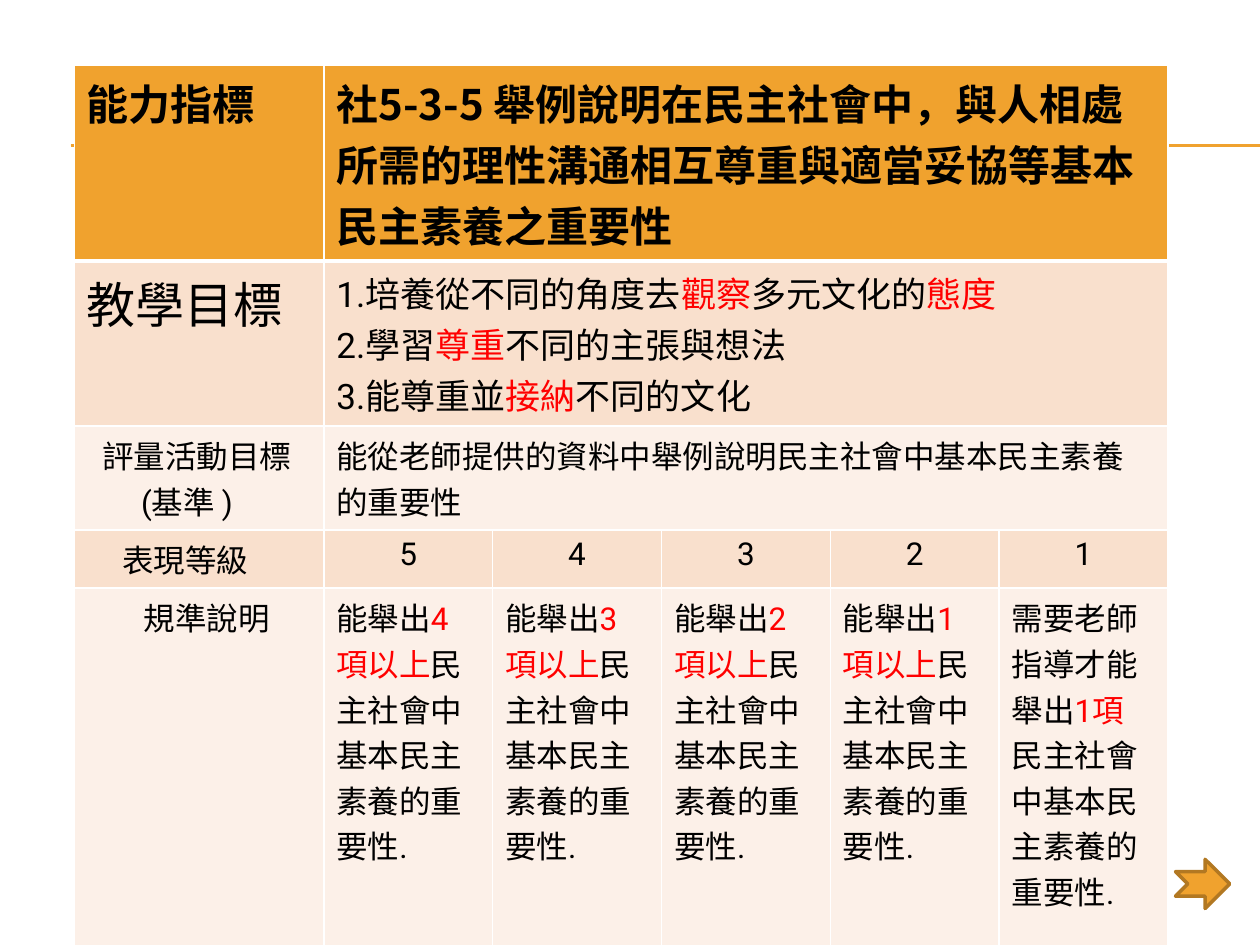
from lxml import etree
from pptx import Presentation
from pptx.dml.color import RGBColor
from pptx.enum.shapes import MSO_CONNECTOR, MSO_SHAPE
from pptx.enum.text import PP_ALIGN
from pptx.oxml.ns import qn
from pptx.util import Inches, Pt

STRAIGHT = MSO_CONNECTOR.STRAIGHT
NOTCHED_ARROW = MSO_SHAPE.NOTCHED_RIGHT_ARROW
LEFT, CENTER = PP_ALIGN.LEFT, PP_ALIGN.CENTER

ORANGE, DARK_ORANGE = "F0A22E", "B27822"
PEACH, PALE = "F9E0CD", "FCF0E8"
WHITE, BLACK, RED = "FFFFFF", "000000", "FF0000"
CJK_FONT, LATIN_FONT = "Noto Sans CJK SC", "Roboto"

COLUMN_WIDTHS = [1.98] + [1.34] * 5
ROW_HEIGHTS = [1.27, 1.08, 0.69, 0.46, 3.19]
ROW_FILLS = [ORANGE, PEACH, PALE, PEACH, PALE]
BODY = {"size": Pt(18), "bold": False, "name": LATIN_FONT}
HEADING = {"size": Pt(24), "bold": True, "name": CJK_FONT}
GOAL_LABEL = {**BODY, "size": Pt(28)}
GOAL = {**BODY, "size": Pt(20)}

LABELS = [
    ([("能力指標", 0)], HEADING),
    ([("教學目標", 0)], GOAL_LABEL),
    ([("評量活動目標", 0.12), ("(基準 )", 0.43)], BODY),
    ([("表現等級", 0.28)], BODY),
    ([("規準說明", 0.45)], BODY),
]
MERGED_TEXTS = [
    (["社5-3-5 舉例說明在民主社會中，與人相處所需的理性溝通相互尊重與適當妥協等基本民主素養之重要性"], HEADING),
    (["1.培養從不同的角度去|觀察|多元文化的|態度",
      "2.學習|尊重|不同的主張與想法",
      "3.能尊重並|接納|不同的文化"], GOAL),
    (["能從老師提供的資料中舉例說明民主社會中基本民主素養的重要性"], BODY),
]
LEVELS = [5, 4, 3, 2, 1]
CRITERIA_STARTS = [f"能舉出|{level - 1}項以上" for level in LEVELS[:-1]]
CRITERIA_STARTS.append("需要老師指導才能舉出|1項")
CRITERIA_END = "|民主社會中基本民主素養的重要性."


def color(value):
    return RGBColor.from_string(value)


def write_paragraph(paragraph, marked_text, formats, align=LEFT, indent=0):
    paragraph.alignment = align
    if indent:
        paragraph._p.get_or_add_pPr().set("marL", str(Inches(indent)))
    for index, text in enumerate(marked_text.split("|")):
        run = paragraph.add_run()
        run.text = text
        for name, value in formats.items():
            setattr(run.font, name, value)
        run.font.color.rgb = color(RED if index % 2 else BLACK)
        east_asian = etree.SubElement(run._r.get_or_add_rPr(), qn("a:ea"))
        east_asian.set("typeface", CJK_FONT)


def write_cell(cell, lines, formats, align=LEFT):
    frame = cell.text_frame
    for index, (text, indent) in enumerate(lines):
        paragraph = frame.add_paragraph() if index else frame.paragraphs[0]
        write_paragraph(paragraph, text, formats, align, indent)


def style_cell(cell, fill, top_width, bottom_width):
    cell.fill.solid()
    cell.fill.fore_color.rgb = color(fill)
    properties = cell._tc.get_or_add_tcPr()
    borders = {"lnL": 1, "lnR": 1, "lnT": top_width, "lnB": bottom_width}
    for index, (side, width) in enumerate(borders.items()):
        border = etree.Element(qn(f"a:{side}"), w=str(Pt(width)))
        solid = etree.SubElement(border, qn("a:solidFill"))
        etree.SubElement(solid, qn("a:srgbClr"), val=WHITE)
        properties.insert(index, border)


def add_rubric(slide, left, top, width, height):
    frame = slide.shapes.add_table(len(ROW_HEIGHTS), len(COLUMN_WIDTHS), left, top, width, height)
    table = frame.table
    table.first_row = table.horz_banding = False
    for column, column_width in zip(table.columns, COLUMN_WIDTHS):
        column.width = Inches(column_width)
    for index, (row, row_height) in enumerate(zip(table.rows, ROW_HEIGHTS)):
        row.height = Inches(row_height)
        for cell in row.cells:
            style_cell(cell, ROW_FILLS[index], 3 if index == 1 else 1, 3 if index == 0 else 1)
    for index, (lines, formats) in enumerate(LABELS):
        write_cell(table.cell(index, 0), lines, formats)
    for index, (texts, formats) in enumerate(MERGED_TEXTS):
        cell = table.cell(index, 1)
        cell.merge(table.cell(index, len(LEVELS)))
        write_cell(cell, [(text, 0) for text in texts], formats)
    table.cell(0, 1).text_frame.paragraphs[0].space_before = Pt(4.8)
    for column, (level, start) in enumerate(zip(LEVELS, CRITERIA_STARTS), 1):
        write_cell(table.cell(3, column), [(str(level), 0)], BODY, CENTER)
        write_cell(table.cell(4, column), [(start + CRITERIA_END, 0)], BODY)


def add_rules(slide, left, top, width, gap):
    for y in (top, top + gap):
        rule = slide.shapes.add_connector(STRAIGHT, left, y, left + width, y)
        rule.line.color.rgb = color(ORANGE)
        rule.line.width = Pt(0.75)
        etree.SubElement(rule._element.spPr, qn("a:effectLst"))


def add_next_arrow(slide, left, top, width, height):
    arrow = slide.shapes.add_shape(NOTCHED_ARROW, left, top, width, height)
    arrow.shadow.inherit = False
    arrow.fill.solid()
    arrow.fill.fore_color.rgb = color(ORANGE)
    arrow.line.color.rgb = color(DARK_ORANGE)
    arrow.line.width = Pt(2)


def main():
    presentation = Presentation()
    presentation.slide_width, presentation.slide_height = Inches(10), Inches(7.5)
    slide = presentation.slides.add_slide(presentation.slide_layouts[6])
    add_rules(slide, Inches(0.56), Inches(1.15), Inches(9.44), Inches(0.01))
    add_rubric(slide, Inches(0.59), Inches(0.52), Inches(8.66), Inches(6.76))
    add_next_arrow(slide, Inches(9.33), Inches(6.82), Inches(0.43), Inches(0.39))
    presentation.save("out.pptx")


if __name__ == "__main__":
    main()
